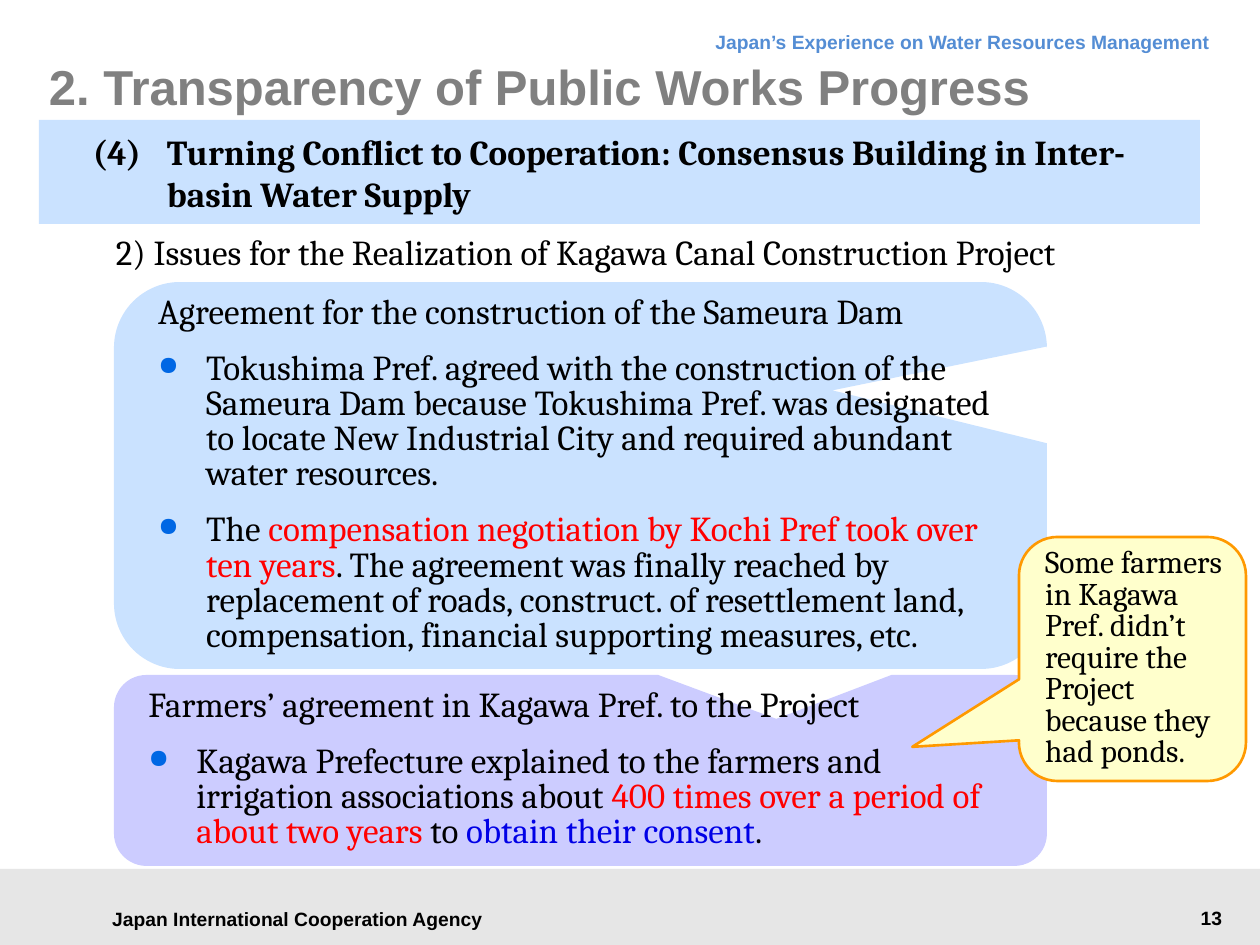
from dataclasses import dataclass

from lxml import etree
from pptx import Presentation
from pptx.dml.color import RGBColor
from pptx.enum.shapes import MSO_SHAPE
from pptx.enum.text import MSO_ANCHOR, PP_ALIGN
from pptx.oxml.ns import qn
from pptx.util import Emu, Pt

RECT = MSO_SHAPE.RECTANGLE
CALLOUT = MSO_SHAPE.ROUNDED_RECTANGULAR_CALLOUT
TOP, MIDDLE = MSO_ANCHOR.TOP, MSO_ANCHOR.MIDDLE
LEFT, CENTER, RIGHT = PP_ALIGN.LEFT, PP_ALIGN.CENTER, PP_ALIGN.RIGHT
SCALE = 914400 / 126


def px(n):
    return Emu(round(n * SCALE))


@dataclass(frozen=True)
class Theme:
    sans: str = "Arial"
    serif: str = "Cambria"
    black: str = "000000"
    gray: str = "808080"
    footer: str = "E6E6E6"
    header: str = "548DD4"
    sky: str = "CAE2FF"
    lavender: str = "CCCCFF"
    cream: str = "FFFFCC"
    orange: str = "FF9900"
    red: str = "FF0000"
    blue: str = "0000E6"
    bullet: str = "0067E4"
    small: int = 11
    note: int = 18
    body: int = 20
    title: int = 28


class Deck:
    def __init__(self, theme):
        self.theme = theme
        self.prs = Presentation()
        self.prs.slide_width, self.prs.slide_height = px(1260), px(945)
        self.s = self.prs.slides.add_slide(self.prs.slide_layouts[6])

    def frame(self, sp, insets, anchor):
        tf = sp.text_frame
        sides = ("margin_left", "margin_top", "margin_right", "margin_bottom")
        fmt = dict(zip(sides, map(px, insets)))
        fmt.update(word_wrap=True, vertical_anchor=anchor)
        for key, value in fmt.items():
            setattr(tf, key, value)
        return tf

    def paragraph(self, p, runs, size, font, bold=False, hang=0, bullet=False, **fmt):
        pPr = p._p.get_or_add_pPr()
        if hang:
            pPr.set("marL", str(px(hang)))
            pPr.set("indent", str(-px(hang)))
        if bullet:
            clr = etree.SubElement(pPr, qn("a:buClr"))
            etree.SubElement(clr, qn("a:srgbClr"), val=self.theme.bullet)
            etree.SubElement(pPr, qn("a:buSzPct"), val="75000")
            etree.SubElement(pPr, qn("a:buChar"), char="●")
        for key, value in {"alignment": LEFT, **fmt}.items():
            setattr(p, key, value)
        for text, color in runs:
            r = p.add_run()
            r.text = text
            for key, value in {"size": Pt(size), "name": font, "bold": bold}.items():
                setattr(r.font, key, value)
            r.font.color.rgb = RGBColor.from_string(color)

    def text(self, box, text, size, font, color, insets=(13, 6, 13, 6), anchor=TOP, **fmt):
        sp = self.s.shapes.add_textbox(*map(px, box))
        tf = self.frame(sp, insets, anchor)
        self.paragraph(tf.paragraphs[0], [(text, color)], size, font, **fmt)

    def shape(self, kind, box, fill, line=None, adj=()):
        sp = self.s.shapes.add_shape(kind, *map(px, box))
        sp.shadow.inherit = False
        sp.fill.solid()
        sp.fill.fore_color.rgb = RGBColor.from_string(fill)
        if line:
            sp.line.color.rgb = RGBColor.from_string(line)
            sp.line.width = Pt(1.5)
        else:
            sp.line.fill.background()
        for i, value in enumerate(adj):
            sp.adjustments[i] = value
        return sp

    def band(self, box, text):
        t = self.theme
        tf = self.frame(self.shape(RECT, box, t.sky), (54, 10, 44, 10), TOP)
        self.paragraph(tf.paragraphs[0], [(text, t.black)], t.body, t.serif, bold=True, hang=74)

    def panel(self, box, fill, adj, heading, bullets):
        t = self.theme
        tf = self.frame(self.shape(CALLOUT, box, fill, adj=adj), (25, 5, 15, 5), MIDDLE)
        fmt = {"line_spacing": Pt(20), "space_after": Pt(12)}
        self.paragraph(tf.paragraphs[0], [(heading, t.black)], t.body, t.serif, **fmt)
        for runs in bullets:
            self.paragraph(tf.add_paragraph(), runs, t.body, t.serif, hang=48, bullet=True, **fmt)

    def note(self, box, adj, text):
        t = self.theme
        sp = self.shape(CALLOUT, box, t.cream, t.orange, adj)
        tf = self.frame(sp, (15, 0, 0, 0), MIDDLE)
        self.paragraph(tf.paragraphs[0], [(text, t.black)], t.note, t.serif, line_spacing=Pt(18))


def main():
    t = Theme()
    d = Deck(t)
    d.shape(RECT, (0, 869, 1260, 76), t.footer)
    d.text((89, 897, 417, 43), "Japan International Cooperation Agency", t.small, t.sans,
           t.black, anchor=MIDDLE, bold=True, alignment=CENTER)
    d.text((343, 16, 880, 48), "Japan’s Experience on Water Resources Management", t.small,
           t.sans, t.header, bold=True, alignment=RIGHT, line_spacing=Pt(18))
    d.text((1037, 900, 198, 36), "13", t.small, t.sans, t.black, bold=True, alignment=RIGHT)
    d.text((49, 36, 1134, 99), "2. Transparency of Public Works Progress", t.title, t.sans,
           t.gray, insets=(0, 0, 0, 0), anchor=MIDDLE, bold=True)
    d.text((103, 224, 1097, 55),
           "2) Issues for the Realization of Kagawa Canal Construction Project",
           t.body, t.serif, t.black)
    d.panel((114, 282, 933, 387), t.sky, (0.27, -0.22, 0.17),
            "Agreement for the construction of the Sameura Dam", [
                [("Tokushima Pref. agreed with the construction of the Sameura Dam because "
                  "Tokushima Pref. was designated to locate New Industrial City and required "
                  "abundant water resources.", t.black)],
                [("The ", t.black),
                 ("compensation negotiation by Kochi Pref took over ten years", t.red),
                 (". The agreement was finally reached by replacement of roads, construct. of "
                  "resettlement land, compensation, financial supporting measures, etc.",
                  t.black)],
            ])
    d.panel((114, 675, 933, 191), t.lavender, (0.21, -0.27, 0.17),
            "Farmers’ agreement in Kagawa Pref. to the Project", [
                [("Kagawa Prefecture explained to the farmers and irrigation associations about ",
                  t.black),
                 ("400 times over a period of about two years", t.red),
                 (" to ", t.black),
                 ("obtain their consent", t.blue),
                 (".", t.black)],
            ])
    d.note((1019, 537, 227, 244), (-0.97, 0.36, 0.17),
           "Some farmers in Kagawa Pref. didn’t require the Project because they had ponds.")
    d.band((39, 120, 1161, 104), "(4)\tTurning Conflict to Cooperation: Consensus Building "
                                 "in Inter-basin Water Supply")
    d.prs.save("out.pptx")


if __name__ == "__main__":
    main()
